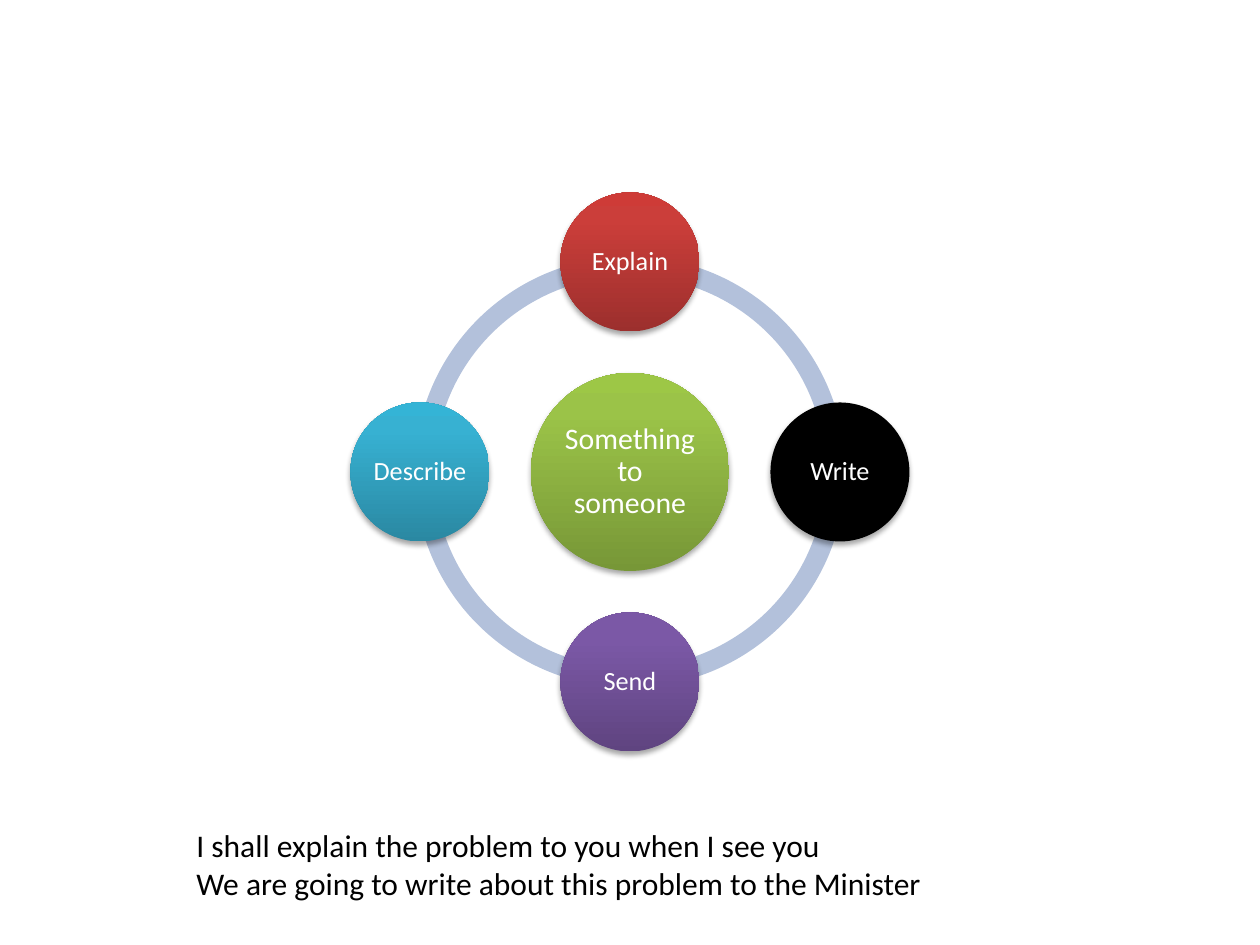
from lxml import etree
from pptx import Presentation
from pptx.dml.color import RGBColor
from pptx.enum.shapes import MSO_SHAPE as Shape
from pptx.enum.text import MSO_ANCHOR as Anchor, PP_ALIGN as Align
from pptx.oxml import parse_xml
from pptx.oxml.ns import nsdecls, qn
from pptx.util import Emu, Pt

COLORS = {
    "ring": "B3C1DB", "white": "FFFFFF", "black": "000000",
    # Gradients run from the bottom to the top
    "green": ("779737", "9BC348", "9DC746"),
    "red": ("9C2F2D", "CB3E3A", "CE3B37"),
    "purple": ("5F4480", "7B58A6", "7C57A8"),
    "teal": ("2A88A2", "37B1D2", "34B4D6"),
}
FONT = "Calibri"
CENTER_X, CENTER_Y = 630, 472
RING_SIZE, ORBIT = 431, 210


def px(length):
    return Emu(round(length * 914400 / 126))


def add_circle(x, y, size, color, text, font_size):
    """Add a shadowed circle centred on x, y with a white label."""
    shape = slide.shapes.add_shape(
        Shape.OVAL, px(x - size / 2), px(y - size / 2), px(size), px(size))
    shape.line.fill.background()
    fill = COLORS[color]
    if isinstance(fill, str):
        shape.fill.solid()
        shape.fill.fore_color.rgb = RGBColor.from_string(fill)
    else:
        shape.fill.gradient()
        shape.fill.gradient_angle = 90
        stops = shape._element.spPr.find(qn("a:gradFill")).find(qn("a:gsLst"))
        for stop in list(stops):
            stops.remove(stop)
        for position, stop_color in zip((0, 80000, 100000), fill):
            stop = etree.SubElement(stops, qn("a:gs"), pos=str(position))
            etree.SubElement(stop, qn("a:srgbClr"), val=stop_color)
    shape._element.spPr.append(parse_xml(
        f'<a:effectLst {nsdecls("a")}><a:outerShdw blurRad="40000" dist="23000" '
        'dir="5400000" rotWithShape="0"><a:srgbClr val="000000">'
        '<a:alpha val="35000"/></a:srgbClr></a:outerShdw></a:effectLst>'))

    frame = shape.text_frame
    frame.word_wrap = True
    frame.vertical_anchor = Anchor.MIDDLE
    frame.margin_left = frame.margin_right = px(2)
    frame.margin_top = frame.margin_bottom = px(2)
    frame.text = text
    paragraph = frame.paragraphs[0]
    paragraph.alignment = Align.CENTER
    paragraph.line_spacing = 0.9
    paragraph.font.name = FONT
    paragraph.font.size = Pt(font_size)
    paragraph.font.color.rgb = RGBColor.from_string(COLORS["white"])


presentation = Presentation()
presentation.slide_width, presentation.slide_height = px(1260), px(945)
slide = presentation.slides.add_slide(presentation.slide_layouts[6])

# Ring of four quarter arcs; a right angle is 54 in adjustment units
for start, end in ((108, 162), (54, 108), (0, 54), (162, 0)):
    arc = slide.shapes.add_shape(
        Shape.BLOCK_ARC, px(CENTER_X - RING_SIZE / 2),
        px(CENTER_Y - RING_SIZE / 2), px(RING_SIZE), px(RING_SIZE))
    for index, value in enumerate((start, end, 0.046)):
        arc.adjustments[index] = value
    arc.shadow.inherit = False
    arc.fill.solid()
    arc.fill.fore_color.rgb = RGBColor.from_string(COLORS["ring"])
    arc.line.fill.background()

# Hub and the verbs around it
add_circle(CENTER_X, CENTER_Y, 198, "green", "Something to someone", 17)
for step_x, step_y, color, verb in (
        (0, -1, "red", "Explain"), (1, 0, "black", "Write"),
        (0, 1, "purple", "Send"), (-1, 0, "teal", "Describe")):
    add_circle(CENTER_X + step_x * ORBIT, CENTER_Y + step_y * ORBIT,
               139, color, verb, 15)

# Example sentences
examples = slide.shapes.add_textbox(px(184), px(820), px(912), px(89)).text_frame
examples.word_wrap = True
examples.text = ("I shall explain the problem to you when I see you\n"
                 "We are going to write about this problem to the Minister")
for paragraph in examples.paragraphs:
    paragraph.font.name = FONT
    paragraph.font.size = Pt(18)
    paragraph.font.color.rgb = RGBColor.from_string(COLORS["black"])

presentation.save("out.pptx")
